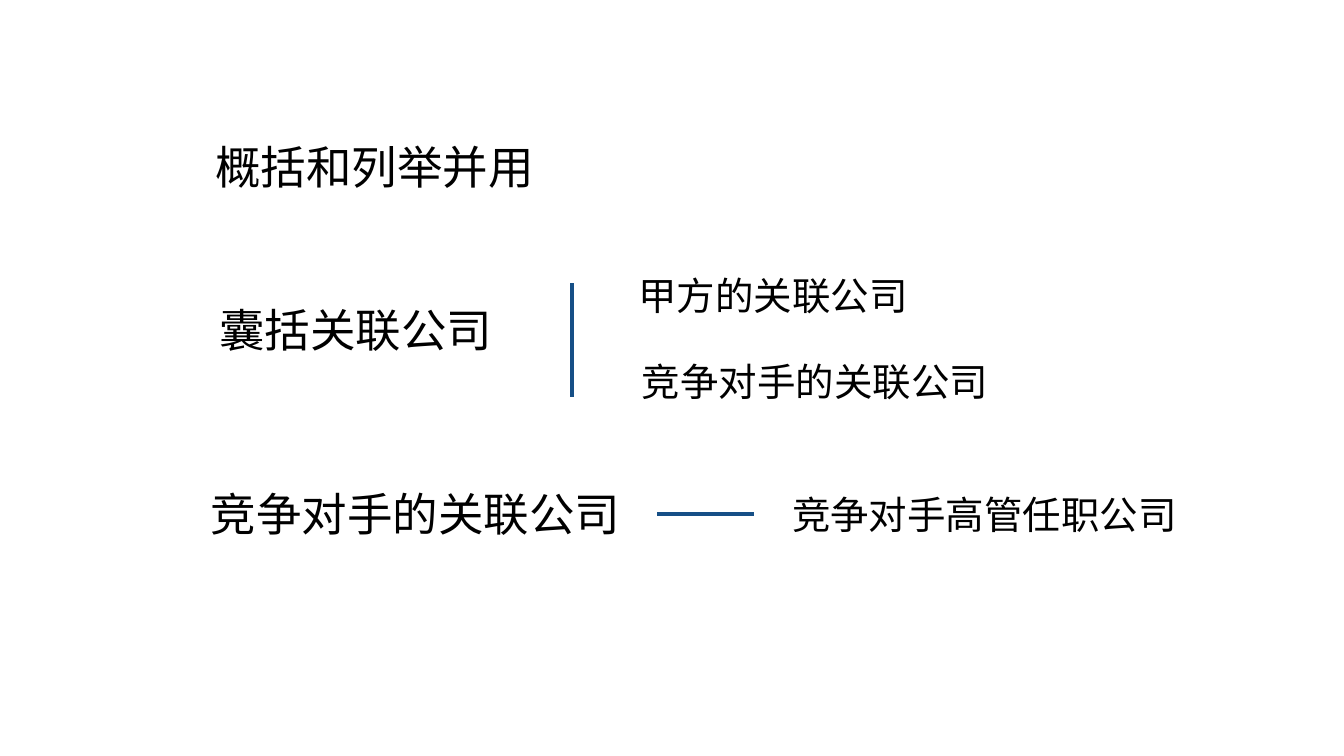
from lxml.etree import SubElement
from pptx import Presentation
from pptx.dml.color import RGBColor
from pptx.enum.shapes import MSO_CONNECTOR
from pptx.enum.text import MSO_ANCHOR, MSO_AUTO_SIZE, PP_ALIGN
from pptx.oxml.ns import qn
from pptx.util import Pt

BLACK = RGBColor(0x00, 0x00, 0x00)
WHITE = RGBColor(0xFF, 0xFF, 0xFF)
BLUE = RGBColor(0x16, 0x4F, 0x86)
FONT = "Arial"
HEAD_SIZE, DETAIL_SIZE = 65, 55
HEAD_HEIGHT, DETAIL_HEIGHT = 97, 83.5


def write_text(shape, text, size):
    frame = shape.text_frame
    frame.word_wrap = False
    frame.auto_size = MSO_AUTO_SIZE.SHAPE_TO_FIT_TEXT
    frame.vertical_anchor = MSO_ANCHOR.MIDDLE
    frame.margin_left = frame.margin_right = Pt(3)
    frame.margin_top = frame.margin_bottom = Pt(3)
    para = frame.paragraphs[0]
    para.alignment = PP_ALIGN.CENTER
    span = para.add_run()
    span.text = text
    span.font.name = FONT
    span.font.size = Pt(size)
    span.font.color.rgb = BLACK


def add_label(shapes, text, left, top, width, height, size):
    box = shapes.add_textbox(Pt(left), Pt(top), Pt(width), Pt(height))
    write_text(box, text, size)


def add_rule(shapes, x1, y1, x2, y2):
    rule = shapes.add_connector(MSO_CONNECTOR.STRAIGHT, Pt(x1), Pt(y1), Pt(x2), Pt(y2))
    rule.line.color.rgb = BLUE
    rule.line.width = Pt(5)
    SubElement(rule._element.spPr, qn("a:effectLst"))


def place_title(page, left, top, width):
    title = page.shapes.title
    title.left, title.top = Pt(left), Pt(top)
    title.width, title.height = Pt(width), Pt(HEAD_HEIGHT)
    write_text(title, "概括和列举并用", HEAD_SIZE)


def add_affiliates(page, left, top):
    """A heading, an upright rule and the two kinds of affiliate."""
    shapes = page.shapes.add_group_shape().shapes
    add_label(shapes, "囊括关联公司", left, top + 43, 397.5, HEAD_HEIGHT, HEAD_SIZE)
    details = [("甲方的关联公司", 598.5, 392.5), ("竞争对手的关联公司", 603.5, 502.5)]
    for row, (text, offset, width) in enumerate(details):
        add_label(shapes, text, left + offset, top + row * 123, width,
                  DETAIL_HEIGHT, DETAIL_SIZE)
    add_rule(shapes, left + 507.5, top + 187, left + 507.5, top + 25)


def add_rivals(page, left, top):
    """A heading joined by a level rule to its detail."""
    shapes = page.shapes.add_group_shape().shapes
    middle = top + HEAD_HEIGHT / 2
    add_label(shapes, "竞争对手的关联公司", left, top, 592.5, HEAD_HEIGHT, HEAD_SIZE)
    add_label(shapes, "竞争对手高管任职公司", left + 830, middle - DETAIL_HEIGHT / 2,
              557.5, DETAIL_HEIGHT, DETAIL_SIZE)
    add_rule(shapes, left + 641.5, middle, left + 779, middle)


def main():
    deck = Presentation()
    deck.slide_width, deck.slide_height = Pt(1920), Pt(1080)
    page = deck.slides.add_slide(deck.slide_layouts[5])
    page.background.fill.solid()
    page.background.fill.fore_color.rgb = WHITE

    place_title(page, 304, 188.5, 462)
    add_affiliates(page, 309.5, 379.5)
    add_rivals(page, 297.5, 685.5)
    deck.save("out.pptx")


if __name__ == "__main__":
    main()
